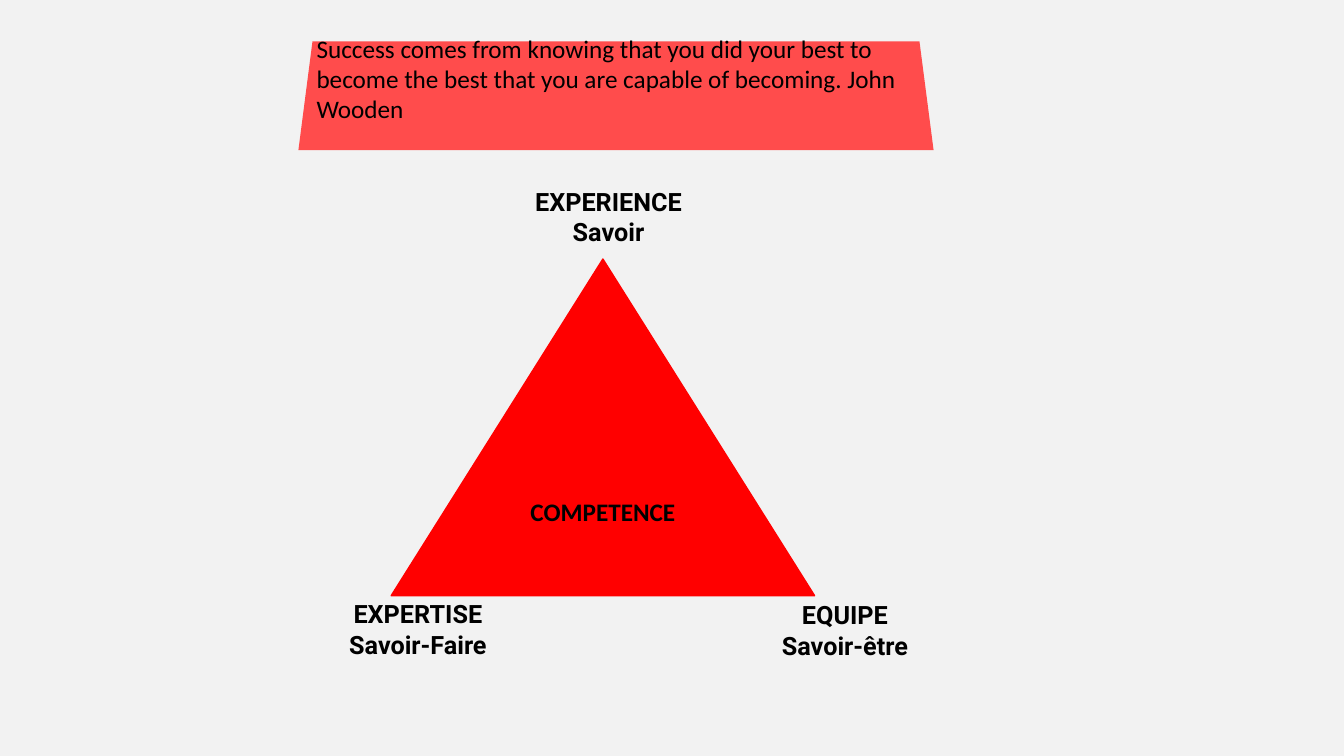
"""Builds the competence triangle slide with its three corner labels and quote."""
import dataclasses

import pptx
import pptx.dml.color
import pptx.enum.shapes
import pptx.enum.text
import pptx.util

Inches = pptx.util.Inches
Align = pptx.enum.text.PP_ALIGN
Anchor = pptx.enum.text.MSO_ANCHOR

COLOURS = {"background": "F2F2F2", "triangle": "FF0000", "banner": "FF4C4C", "text": "000000"}
QUOTE = ("Success comes from knowing that you did your best to become the best "
         "that you are capable of becoming. John Wooden")


@dataclasses.dataclass(frozen=True)
class CornerLabel:
    """A heading and its kind of knowledge beside a triangle corner."""
    heading: str
    knowledge: str
    left: float
    top: float
    width: float


LABELS = [
    CornerLabel("EXPERIENCE", "Savoir", 4.93, 1.8, 2.21),
    CornerLabel("EXPERTISE", "Savoir-Faire", 3.12, 5.89, 2.05),
    CornerLabel("EQUIPE", "Savoir-être", 7.14, 5.9, 2.48),
]


def colour(name: str) -> pptx.dml.color.RGBColor:
    """Return the named colour."""
    return pptx.dml.color.RGBColor.from_string(COLOURS[name])


def write(box, *lines: str, font: str = "Calibri", bold: bool = True,
          align=Align.CENTER, anchor=Anchor.TOP) -> None:
    """Write one formatted paragraph per line into a box."""
    frame = box.text_frame
    frame.word_wrap = True
    frame.vertical_anchor = anchor
    frame.text = "\n".join(lines)
    for para in frame.paragraphs:
        para.alignment = align
        for span in para.runs:
            span.font.name = font
            span.font.size = pptx.util.Pt(18)
            span.font.bold = bold
            span.font.color.rgb = colour("text")


def draw_triangle(page) -> None:
    """Draw the red triangle."""
    triangle = page.shapes.add_shape(
        pptx.enum.shapes.MSO_SHAPE.ISOSCELES_TRIANGLE,
        Inches(3.88), Inches(2.57), Inches(4.2), Inches(3.34))
    triangle.shadow.inherit = False
    triangle.fill.solid()
    triangle.fill.fore_color.rgb = colour("triangle")
    triangle.line.color.rgb = colour("triangle")
    triangle.line.width = pptx.util.Pt(1)
    write(triangle, "COMPETENCE", anchor=Anchor.MIDDLE)


def draw_label(page, label: CornerLabel) -> None:
    """Draw the label of one corner."""
    box = page.shapes.add_textbox(Inches(label.left), Inches(label.top),
                                  Inches(label.width), Inches(0.71))
    write(box, label.heading, label.knowledge, font="Roboto")


def draw_banner(page) -> None:
    """Draw the tapered banner that holds the quote."""
    outline = page.shapes.build_freeform(Inches(3.1), Inches(0.41))
    corners = [(9.12, 0.41), (9.26, 1.49), (2.96, 1.49)]
    outline.add_line_segments([(Inches(x), Inches(y)) for x, y in corners])
    banner = outline.convert_to_shape()
    banner.shadow.inherit = False
    banner.fill.solid()
    banner.fill.fore_color.rgb = colour("banner")
    banner.line.fill.background()
    frame = banner.text_frame
    frame.margin_left = frame.margin_right = Inches(0.18)
    frame.margin_top = Inches(-0.08)
    write(banner, QUOTE, bold=False, align=Align.LEFT)


def main() -> None:
    """Build and save the deck."""
    deck = pptx.Presentation()
    deck.slide_width, deck.slide_height = Inches(13.33), Inches(7.5)
    page = deck.slides.add_slide(deck.slide_layouts[6])
    page.background.fill.solid()
    page.background.fill.fore_color.rgb = colour("background")
    draw_triangle(page)
    for label in LABELS:
        draw_label(page, label)
    draw_banner(page)
    deck.save("out.pptx")


if __name__ == "__main__":
    main()
